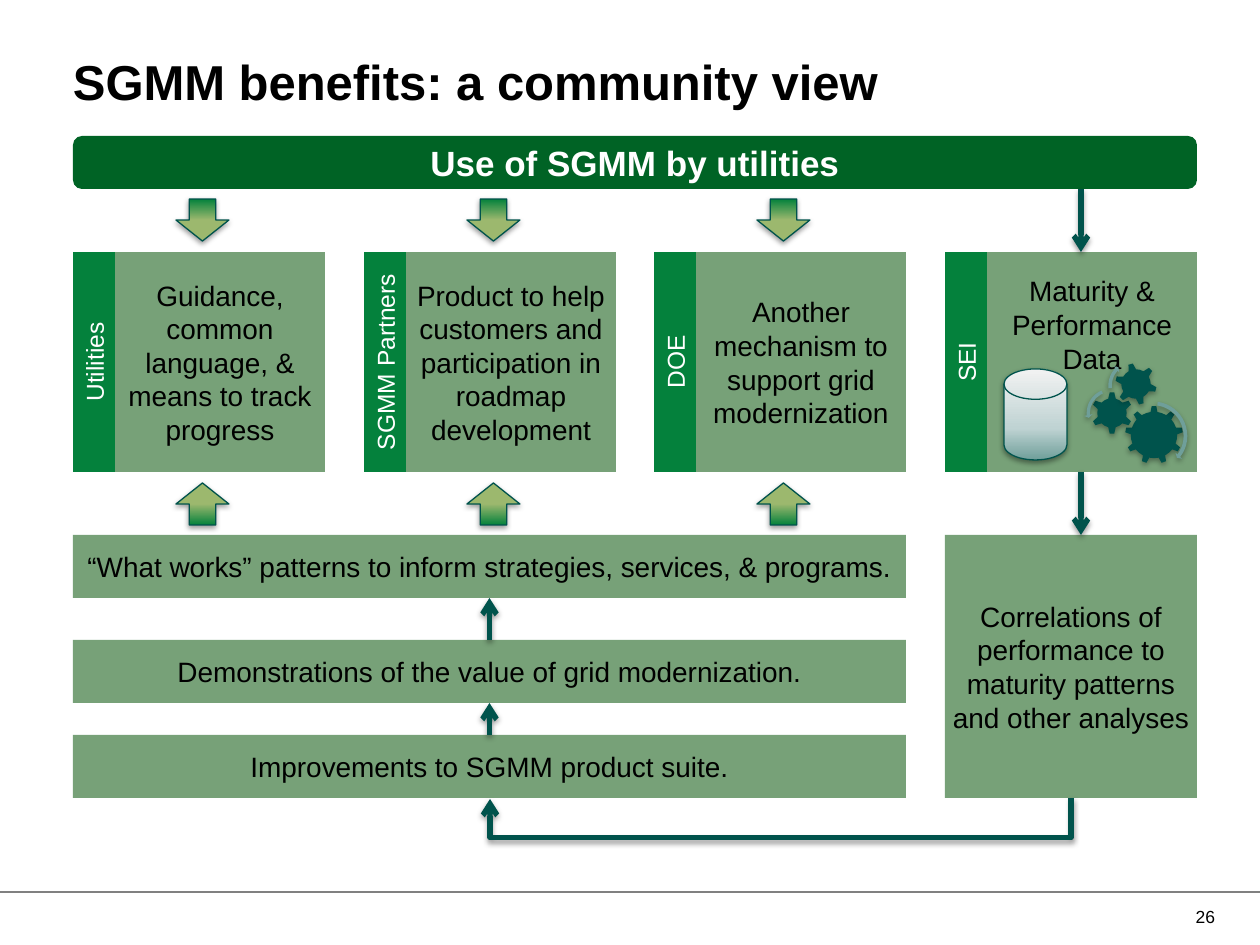
"""Build the SGMM community benefits slide."""
from dataclasses import dataclass
from typing import NamedTuple

from lxml import etree
from pptx import Presentation
from pptx.dml.color import RGBColor
from pptx.enum.shapes import MSO_CONNECTOR, MSO_SHAPE
from pptx.enum.text import MSO_ANCHOR, PP_ALIGN
from pptx.oxml import parse_xml
from pptx.oxml.ns import nsdecls, qn
from pptx.util import Emu, Pt

RECT, ROUND = MSO_SHAPE.RECTANGLE, MSO_SHAPE.ROUNDED_RECTANGLE
DOWN, DISK = MSO_SHAPE.DOWN_ARROW, MSO_SHAPE.FLOWCHART_MAGNETIC_DISK
GEAR6, GEAR9 = MSO_SHAPE.GEAR_6, MSO_SHAPE.GEAR_9
ARC, LEFT_ARC = MSO_SHAPE.CIRCULAR_ARROW, MSO_SHAPE.LEFT_CIRCULAR_ARROW
STRAIGHT, ELBOW = MSO_CONNECTOR.STRAIGHT, MSO_CONNECTOR.ELBOW
LEFT, CENTER, RIGHT = PP_ALIGN.LEFT, PP_ALIGN.CENTER, PP_ALIGN.RIGHT
TOP, MIDDLE = MSO_ANCHOR.TOP, MSO_ANCHOR.MIDDLE
SCALE = 914400 / 126


@dataclass(frozen=True)
class Theme:
    font: str = "Arial"
    black: str = "000000"
    white: str = "FFFFFF"
    bar: str = "006325"
    tab: str = "04813C"
    box: str = "77A178"
    teal: str = "00534C"
    arc: str = "6F9F9A"
    rule: str = "808080"
    arrow: tuple = ((50, "9CB86E"), (100, "04813C"))
    disk: tuple = ((0, "6F9F9A"), (35, "BFD3D3"), (100, "F2F2F2"))
    title: int = 28
    head: int = 20
    body: int = 16
    label: int = 14
    page: int = 10


class Area(NamedTuple):
    x: int
    y: int
    w: int
    h: int


class Card(NamedTuple):
    label: str
    text: str
    anchor: MSO_ANCHOR = MIDDLE
    inset: int = 0


class Part(NamedTuple):
    kind: MSO_SHAPE
    area: Area
    fill: str
    turn: int = 0
    adjust: tuple = ()


THEME = Theme()
CARDS = (
    Card("Utilities", "Guidance, common language, & means to track progress"),
    Card("SGMM Partners", "Product to help customers and participation in roadmap development"),
    Card("DOE", "Another mechanism to support grid modernization"),
    Card("SEI", "Maturity &\vPerformance Data", TOP, 22),
)
ROWS = (
    (535, "“What works” patterns to inform strategies, services, & programs."),
    (640, "Demonstrations of the value of grid modernization."),
    (735, "Improvements to SGMM product suite."),
)
PARTS = (
    Part(GEAR9, Area(1125, 406, 58, 58), THEME.teal),
    Part(GEAR6, Area(1091, 392, 42, 42), THEME.teal),
    Part(GEAR6, Area(1115, 363, 42, 42), THEME.teal, 345),
    Part(ARC, Area(1116, 399, 74, 74), THEME.arc, 0, (0.05, 2.99, 22.45, 166.84, 0.06)),
    Part(LEFT_ARC, Area(1084, 386, 54, 54), THEME.arc, 0, (0.06, 4.3, 104.89, 148.38, 0.08)),
    Part(ARC, Area(1106, 357, 58, 58), THEME.arc, 0, (0.06, 3.94, 133.14, 105.08, 0.07)),
)


def px(size: int) -> Emu:
    """Turn px into EMU."""
    return Emu(round(size * SCALE))


def write(shape, text: str, *, size: int, color: str = THEME.black, bold: bool = False,
          align=CENTER, anchor=MIDDLE, inset: tuple = (0, 0, 0, 0), wrap: bool = True,
          space: float = 1.0) -> None:
    """Put formatted text in a shape."""
    frame = shape.text_frame
    frame.word_wrap, frame.vertical_anchor = wrap, anchor
    frame.margin_left, frame.margin_top, frame.margin_right, frame.margin_bottom = map(px, inset)
    line = frame.paragraphs[0]
    line.text, line.alignment, line.line_spacing = text, align, space
    for run in line.runs:
        font = run.font
        font.name, font.size, font.bold = THEME.font, Pt(size), bold
        font.color.rgb = RGBColor.from_string(color)


def draw(slide, kind, area: Area, fill: str):
    """Add a plain filled shape."""
    shape = slide.shapes.add_shape(kind, *map(px, area))
    shape.shadow.inherit = False
    shape.fill.solid()
    shape.fill.fore_color.rgb = RGBColor.from_string(fill)
    shape.line.fill.background()
    return shape


def shade(shape, alpha: int = 38) -> None:
    """Give a shape a soft shadow below."""
    props = shape._element.spPr
    for old in props.findall(qn("a:effectLst")):
        props.remove(old)
    props.append(parse_xml(
        f'<a:effectLst {nsdecls("a")}><a:outerShdw blurRad="39400" dist="20000" '
        f'dir="5400000" rotWithShape="0"><a:srgbClr val="{THEME.black}">'
        f'<a:alpha val="{alpha}000"/></a:srgbClr></a:outerShdw></a:effectLst>'))


def blend(slide, kind, area: Area, stops: tuple, flip: bool = False) -> None:
    """Add an outlined shape with a gradient rising from its base."""
    shape = draw(slide, kind, area, stops[0][1])
    props = shape._element.spPr
    marks = "".join(f'<a:gs pos="{at}000"><a:srgbClr val="{color}"/></a:gs>' for at, color in stops)
    props.replace(props.find(qn("a:solidFill")), parse_xml(
        f'<a:gradFill {nsdecls("a")} rotWithShape="1"><a:gsLst>{marks}</a:gsLst>'
        '<a:lin ang="16200000" scaled="0"/></a:gradFill>'))
    shape.line.color.rgb = RGBColor.from_string(THEME.teal)
    shape.line.width = Pt(0.75)
    if flip:
        props.find(qn("a:xfrm")).set("flipV", "1")
    shade(shape)


def link(slide, start: tuple, end: tuple, kind=STRAIGHT, color: str = THEME.teal,
         width: int = 3, head: bool = True):
    """Add a connector, with an arrowhead and shadow if wanted."""
    line = slide.shapes.add_connector(kind, *map(px, start + end))
    line.line.color.rgb = RGBColor.from_string(color)
    line.line.width = Pt(width)
    if head:
        etree.SubElement(line.line._get_or_add_ln(), qn("a:tailEnd"), type="arrow")
        shade(line)
    else:
        etree.SubElement(line._element.spPr, qn("a:effectLst"))
    return line


def bend(slide) -> None:
    """Lead the analyses back to the product suite."""
    line = link(slide, (780, 508), (781, 1089), ELBOW)
    props = line._element.spPr
    props.find(qn("a:xfrm")).set("rot", "5400000")
    guides = props.find(qn("a:prstGeom")).get_or_add_avLst()
    etree.SubElement(guides, qn("a:gd"), name="adj1", fmla="val 4000000")


def card(slide, x: int, item: Card) -> None:
    """Add a text box with an upright label at its left."""
    body = draw(slide, RECT, Area(x + 42, 252, 210, 220), THEME.box)
    write(body, item.text, size=THEME.body, anchor=item.anchor, inset=(0, item.inset, 0, 0))
    tab = draw(slide, RECT, Area(x, 252, 42, 220), THEME.tab)
    write(tab, item.label, size=THEME.label, color=THEME.white, wrap=False)
    tab.text_frame._txBody.bodyPr.set("vert", "vert270")


def main() -> None:
    """Build and save the slide."""
    deck = Presentation()
    deck.slide_width, deck.slide_height = px(1260), px(945)
    slide = deck.slides.add_slide(deck.slide_layouts[6])
    link(slide, (0, 892), (1260, 892), color=THEME.rule, width=1, head=False)
    title = slide.shapes.add_textbox(*map(px, Area(73, 58, 1124, 54)))
    write(title, "SGMM benefits: a community view", size=THEME.title, bold=True,
          align=LEFT, anchor=TOP, space=0.9)
    bar = draw(slide, ROUND, Area(73, 136, 1124, 53), THEME.bar)
    write(bar, "Use of SGMM by utilities", size=THEME.head, color=THEME.white, bold=True)

    for i, item in enumerate(CARDS):
        x = 73 + round(872 * i / 3)
        card(slide, x, item)
        if i < 3:
            for y, flip in ((199, False), (483, True)):
                blend(slide, DOWN, Area(x + 103, y, 53, 42), THEME.arrow, flip)
    blend(slide, DISK, Area(1004, 369, 63, 91), THEME.disk)
    for part in PARTS:
        shape = draw(slide, part.kind, part.area, part.fill)
        shape.rotation = part.turn
        for i, value in enumerate(part.adjust):
            shape.adjustments[i] = value
        shade(shape, 35)

    rows = []
    for y, text in ROWS:
        row = draw(slide, RECT, Area(73, y, 833, 63), THEME.box)
        write(row, text, size=THEME.body)
        rows.append(row)
    for upper, lower in zip(rows, rows[1:]):
        rise = link(slide, (489, 640), (489, 598))
        rise.begin_connect(lower, 0)
        rise.end_connect(upper, 2)
    study = draw(slide, RECT, Area(945, 535, 252, 263), THEME.box)
    write(study, "Correlations of performance to maturity patterns and other analyses",
          size=THEME.body)
    for y in (189, 472):
        link(slide, (1081, y), (1081, y + 63))
    bend(slide)
    page = slide.shapes.add_textbox(*map(px, Area(1081, 898, 147, 38)))
    write(page, "26", size=THEME.page, align=RIGHT, inset=(13, 6, 13, 6))
    deck.save("out.pptx")


if __name__ == "__main__":
    main()
